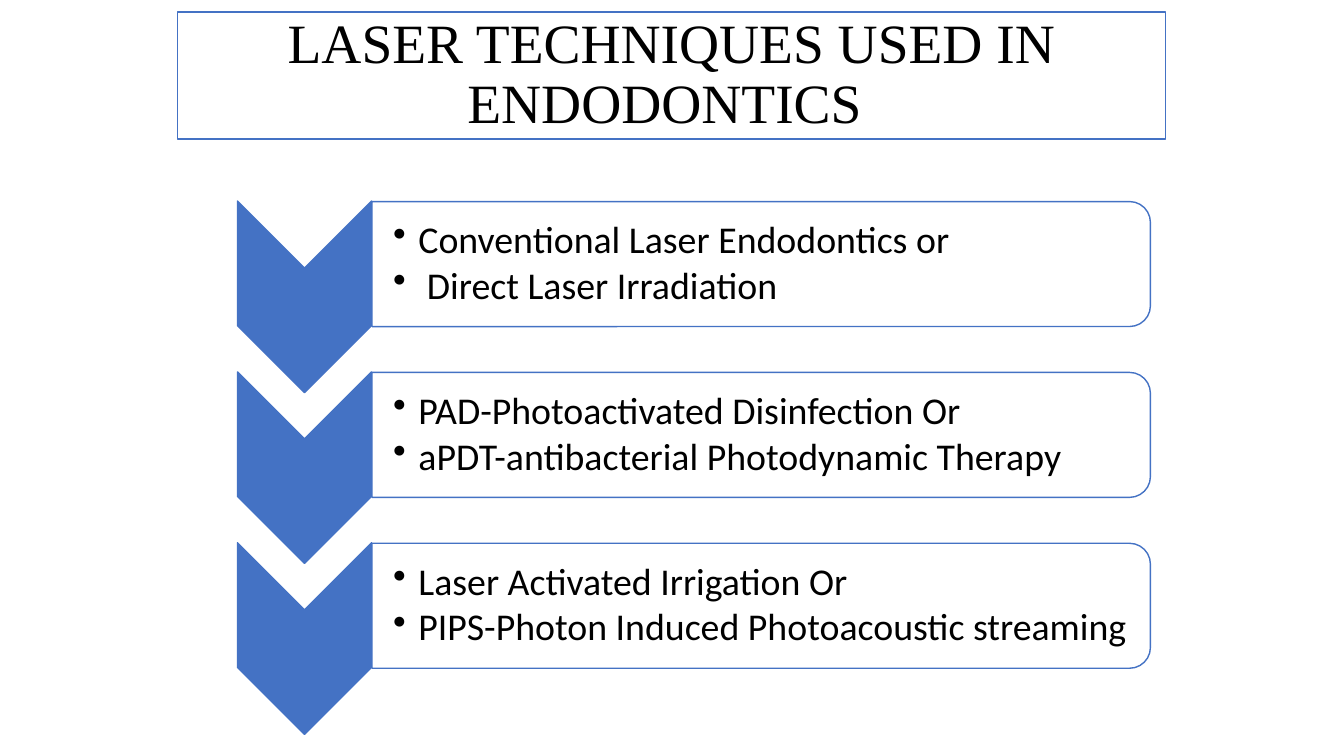
"""Build a slide listing the laser techniques used in endodontics."""
from dataclasses import dataclass

import lxml.etree
import pptx
import pptx.dml.color
import pptx.enum.shapes
import pptx.enum.text
import pptx.oxml.ns
import pptx.util

Inches = pptx.util.Inches
Pt = pptx.util.Pt
Color = pptx.dml.color.RGBColor
Preset = pptx.enum.shapes.MSO_SHAPE
qn = pptx.oxml.ns.qn


@dataclass(frozen=True)
class Theme:
    blue: Color = Color(0x44, 0x72, 0xC4)
    white: Color = Color(0xFF, 0xFF, 0xFF)
    black: Color = Color(0, 0, 0)
    title_font: str = "Times New Roman"
    body_font: str = "Calibri"
    title_size: float = 39.6
    body_size: float = 27


theme = Theme()


def style_shape(shape, fill_color):
    shape.fill.solid()
    shape.fill.fore_color.rgb = fill_color
    shape.line.color.rgb = theme.blue
    shape.line.width = Pt(1)
    shape.shadow.inherit = False


def style_paragraph(paragraph, font_name, size):
    paragraph.line_spacing = 0.9
    for run in paragraph.runs:
        run.font.name = font_name
        run.font.size = Pt(size)
        run.font.color.rgb = theme.black


presentation = pptx.Presentation()
presentation.slide_width = Inches(13.33)
presentation.slide_height = Inches(7.5)
slide = presentation.slides.add_slide(presentation.slide_layouts[5])

title = slide.shapes.title
title.left, title.top = Inches(1.76), Inches(0.12)
title.width, title.height = Inches(9.8), Inches(1.26)
style_shape(title, theme.white)
title.text_frame.text = "LASER TECHNIQUES USED IN ENDODONTICS "
title.text_frame.word_wrap = True
title.text_frame.auto_size = pptx.enum.text.MSO_AUTO_SIZE.NONE
title.text_frame.vertical_anchor = pptx.enum.text.MSO_ANCHOR.MIDDLE
title.text_frame.paragraphs[0].alignment = pptx.enum.text.PP_ALIGN.CENTER
style_paragraph(title.text_frame.paragraphs[0], theme.title_font, theme.title_size)

techniques = [
    ["Conventional Laser Endodontics or", " Direct Laser Irradiation"],
    ["PAD-Photoactivated Disinfection Or", "aPDT-antibacterial Photodynamic Therapy"],
    ["Laser Activated Irrigation Or", "PIPS-Photon Induced Photoacoustic streaming"],
]
row_pitch = 1.695

for row, lines in enumerate(techniques):
    offset = row * row_pitch

    chevron = slide.shapes.add_shape(
        Preset.CHEVRON, Inches(2.07), Inches(2.28 + offset), Inches(1.9), Inches(1.33))
    chevron.rotation = 90
    style_shape(chevron, theme.blue)

    panel = slide.shapes.add_shape(
        Preset.ROUND_2_SAME_RECTANGLE,
        Inches(6.93), Inches(-1.24 + offset), Inches(1.24), Inches(7.72))
    panel.rotation = 90
    style_shape(panel, theme.white)
    panel_color = panel.fill._xPr.find(qn("a:solidFill"))[0]
    lxml.etree.SubElement(panel_color, qn("a:alpha"), val="90000")

    text_box = slide.shapes.add_textbox(
        Inches(3.69), Inches(2.06 + offset), Inches(7.65), Inches(1.12))
    text_frame = text_box.text_frame
    text_frame.word_wrap = True
    text_frame.vertical_anchor = pptx.enum.text.MSO_ANCHOR.MIDDLE
    text_frame.margin_left = Inches(0.21)
    text_frame.margin_right = Inches(0.02)
    text_frame.margin_top = text_frame.margin_bottom = Inches(0.02)
    text_frame.text = "\n".join(lines)
    for paragraph in text_frame.paragraphs:
        paragraph.level = 1
        properties = paragraph._p.get_or_add_pPr()
        properties.set("marL", str(Inches(0.25)))
        properties.set("indent", str(Inches(-0.25)))
        lxml.etree.SubElement(properties, qn("a:buChar"), char="•")
        paragraph.space_after = Pt(3.5)
        style_paragraph(paragraph, theme.body_font, theme.body_size)

presentation.save("out.pptx")
